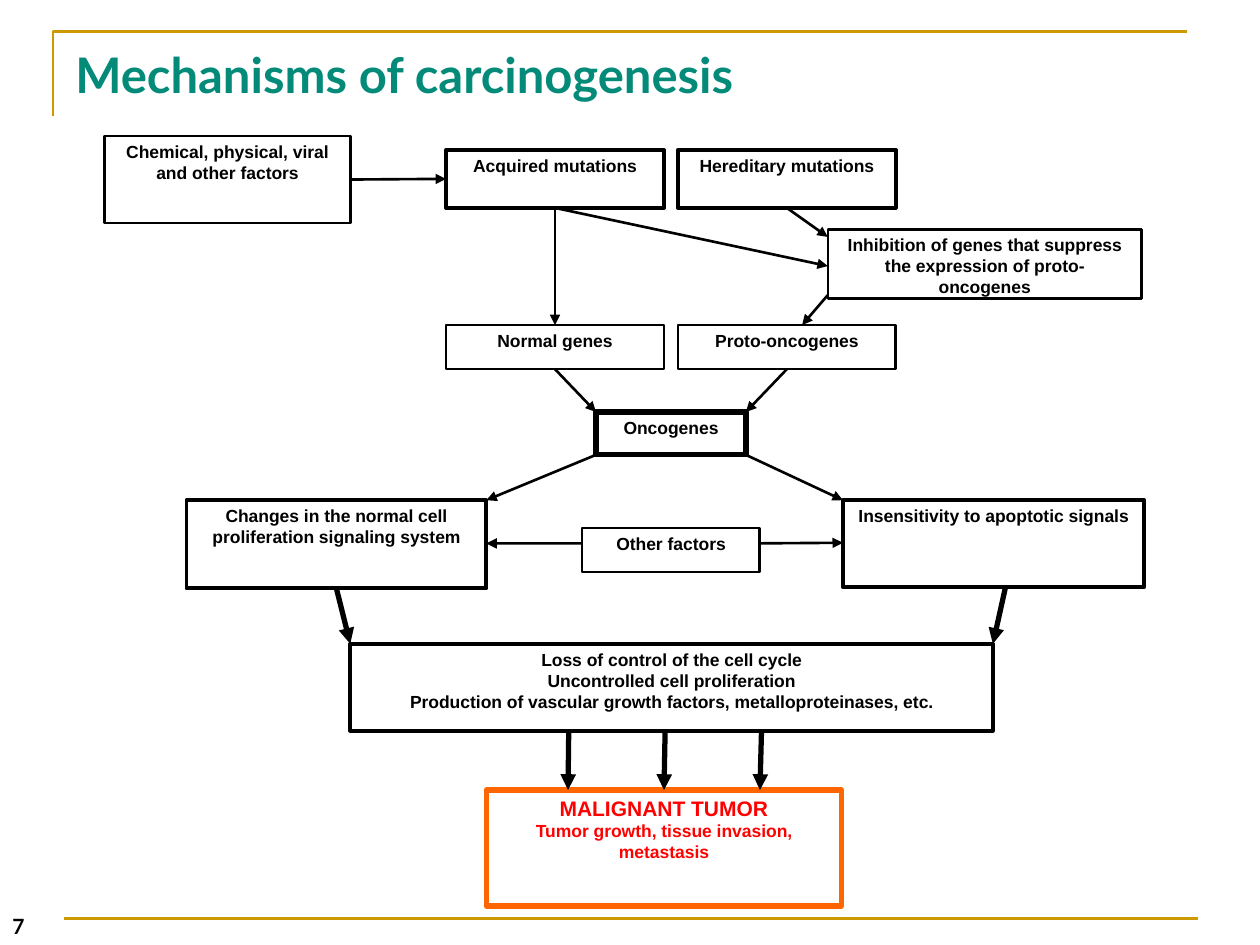
import pptx
import pptx.util
import pptx.dml.color
import pptx.enum.shapes
import pptx.enum.text
import lxml.etree

Pt = pptx.util.Pt
hues = {"ink": "000000", "gold": "CC9900", "teal": "038A79",
        "red": "FF0000", "rust": "FF6600"}

deck = pptx.Presentation()
deck.slide_width = pptx.util.Inches(10)
deck.slide_height = pptx.util.Inches(7.5)
col = deck.slide_width / 100
row = deck.slide_height / 75
slide = deck.slides.add_slide(deck.slide_layouts[6])
items = slide.shapes


def write(shape, lines, sizes, hue, font):
    frame = shape.text_frame
    frame.word_wrap = True
    frame.text = "\n".join(lines)
    for para, size in zip(frame.paragraphs, sizes):
        for run in para.runs:
            run.font.size = Pt(size)
            run.font.bold = True
            run.font.name = font
            run.font.color.rgb = pptx.dml.color.RGBColor.from_string(hues[hue])
    return frame


def link(start, end, hue, width, head):
    line = items.add_connector(
        pptx.enum.shapes.MSO_CONNECTOR.STRAIGHT,
        round(start[0] * col), round(start[1] * row),
        round(end[0] * col), round(end[1] * row))
    line.line.color.rgb = pptx.dml.color.RGBColor.from_string(hues[hue])
    line.line.width = Pt(width)
    space = "{http://schemas.openxmlformats.org/drawingml/2006/main}"
    if head:
        lxml.etree.SubElement(line.line._get_or_add_ln(), space + "tailEnd", type="triangle")
    lxml.etree.SubElement(line._element.spPr, space + "effectLst")


draft = items.build_freeform(round(4.2 * col), round(9.2 * row))
draft.add_line_segments([(round(4.2 * col), round(2.5 * row)),
                         (round(94.2 * col), round(2.5 * row))], close=False)
frame = draft.convert_to_shape()
frame.shadow.inherit = False
frame.fill.background()
frame.line.color.rgb = pptx.dml.color.RGBColor.from_string(hues["gold"])
frame.line.width = Pt(1.5)
link((5.1, 72.9), (95.1, 72.9), "gold", 1.5, False)

page = items.add_textbox(0, round(71.5 * row), round(22.4 * col), round(3.5 * row))
write(page, ["7"], [12], "ink", "Lato").vertical_anchor = pptx.enum.text.MSO_ANCHOR.BOTTOM
title = items.add_textbox(round(5 * col), round(3 * row), round(90 * col), round(10.8 * row))
write(title, ["Mechanisms of carcinogenesis"], [28], "teal", "Lato")

boxes = {
    "cause": (8.3, 10.8, 19.5, 6.9, 1.5, ["Chemical, physical, viral and other factors"]),
    "gained": (35.4, 11.9, 17.3, 4.6, 2.25, ["Acquired mutations"]),
    "born": (53.8, 11.9, 17.3, 4.6, 2.25, ["Hereditary mutations"]),
    "block": (65.7, 18.2, 24.9, 5.5, 1.5,
              ["Inhibition of genes that suppress the expression of proto-oncogenes"]),
    "proto": (53.8, 25.8, 17.3, 3.5, 1.5, ["Proto-oncogenes"]),
    "normal": (35.4, 25.8, 17.3, 3.5, 1.5, ["Normal genes"]),
    "onco": (47.3, 32.7, 11.9, 3.4, 3, ["Oncogenes"]),
    "deaf": (66.9, 39.7, 23.9, 6.9, 2.25, ["Insensitivity to apoptotic signals"]),
    "other": (46.2, 41.9, 14.1, 3.5, 1.5, ["Other factors"]),
    "signal": (14.8, 39.7, 23.8, 7, 2.25,
               ["Changes in the normal cell proliferation signaling system"]),
    "loss": (27.8, 51.1, 51, 6.9, 2.25,
             ["Loss of control of the cell cycle", "Uncontrolled cell proliferation",
              "Production of vascular growth factors, metalloproteinases, etc."]),
    "tumor": (38.6, 62.7, 28.2, 9.2, 3,
              ["MALIGNANT TUMOR", "Tumor growth, tissue invasion, metastasis"]),
}
for name, (left, top, wide, high, width, lines) in boxes.items():
    last = name == "tumor"
    box = items.add_shape(pptx.enum.shapes.MSO_SHAPE.RECTANGLE, round(left * col),
                          round(top * row), round(wide * col), round(high * row))
    box.shadow.inherit = False
    box.fill.background()
    box.line.color.rgb = pptx.dml.color.RGBColor.from_string(hues["rust" if last else "ink"])
    box.line.width = Pt(width)
    text = write(box, lines, [12, 10] if last else [10] * len(lines),
                 "red" if last else "ink", "Arial")
    text.vertical_anchor = pptx.enum.text.MSO_ANCHOR.TOP
    text.margin_left = text.margin_right = round(0.9 * col)
    text.margin_top = text.margin_bottom = round(0.4 * row)
    for para in text.paragraphs:
        para.alignment = pptx.enum.text.PP_ALIGN.CENTER

arrows = [
    ("cause", 1, 0.5, "gained", 0, 0.5, 1.5),
    ("normal", 0.5, 1, "onco", 0, 0, 1.5),
    ("proto", 0.5, 1, "onco", 1, 0, 1.5),
    ("onco", 0, 1, "signal", 1, 0, 1.5),
    ("onco", 1, 1, "deaf", 0, 0, 1.5),
    ("other", 0, 0.35, "signal", 1, 0.49, 1.5),
    ("other", 1, 0.35, "deaf", 0, 0.49, 1.5),
    ("signal", 0.5, 1, "loss", 0, 0, 3),
    ("deaf", 0.54, 1, "loss", 1, 0, 3),
    ("loss", 0.34, 1, "tumor", 0.23, 0, 3),
    ("loss", 0.49, 1, "tumor", 0.5, 0, 3),
    ("loss", 0.64, 1, "tumor", 0.77, 0, 3),
    ("gained", 0.5, 1, "normal", 0.5, 0, 1.5),
    ("block", 0, 0.95, "proto", 0.57, 0, 1.5),
    ("born", 0.5, 1, "block", 0, 0.11, 1.5),
    ("gained", 0.5, 1, "block", 0, 0.53, 1.5),
]
for here, right, down, there, over, under, width in arrows:
    ends = []
    for name, across, along in ((here, right, down), (there, over, under)):
        left, top, wide, high = boxes[name][:4]
        ends.append((left + across * wide, top + along * high))
    link(ends[0], ends[1], "ink", width, True)

deck.save("out.pptx")
